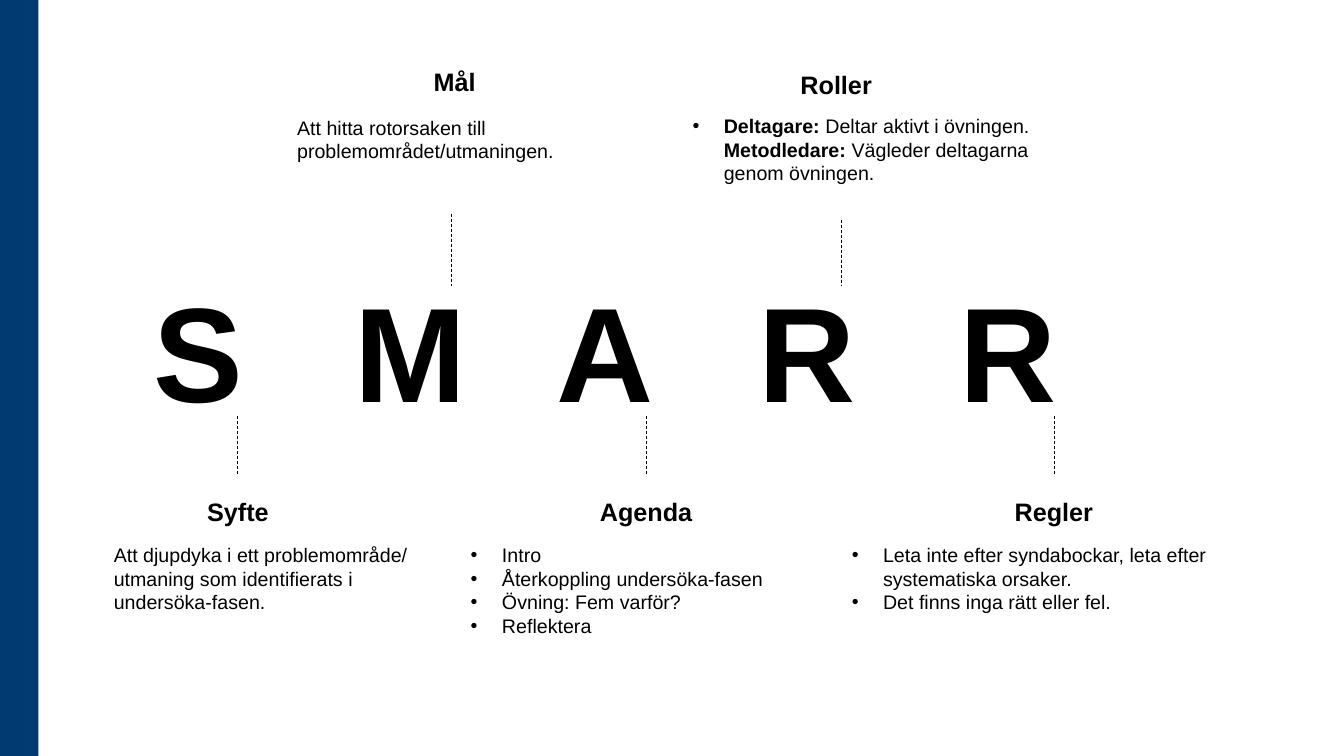
from dataclasses import dataclass

from lxml.etree import SubElement
from pptx import Presentation
from pptx.dml.color import RGBColor
from pptx.enum.dml import MSO_LINE
from pptx.enum.shapes import MSO_CONNECTOR, MSO_SHAPE
from pptx.enum.text import MSO_ANCHOR, MSO_AUTO_SIZE, PP_ALIGN
from pptx.oxml.ns import qn
from pptx.util import Inches, Pt


@dataclass(frozen=True)
class Theme:
    ink: RGBColor = RGBColor(0x00, 0x00, 0x00)
    bar: RGBColor = RGBColor(0x00, 0x3A, 0x70)
    font: str = "Arial"
    word: int = 96
    heading: int = 18
    body: int = 14
    hairline: float = 0.5


class SlideBuilder:
    """Places elements on a grid of 40 columns and 30 rows."""

    COLS, ROWS = 40, 30

    def __init__(self, prs, theme):
        self.theme = theme
        self.col = prs.slide_width / self.COLS
        self.row = prs.slide_height / self.ROWS
        self.slide = prs.slides.add_slide(prs.slide_layouts[4])
        self.shapes = self.slide.shapes
        self.free = [s for s in self.slide.placeholders
                     if s.placeholder_format.idx in (1, 2, 3, 4)]

    def box(self, x, y, w, h):
        return (round(x * self.col), round(y * self.row),
                round(w * self.col), round(h * self.row))

    def put(self, sp, area):
        sp.left, sp.top, sp.width, sp.height = self.box(*area)
        tf = sp.text_frame
        tf.word_wrap = True
        tf.auto_size = MSO_AUTO_SIZE.NONE
        tf.vertical_anchor = MSO_ANCHOR.TOP
        return tf

    def style(self, p, size, bold=False, align=PP_ALIGN.LEFT):
        p.alignment = align
        p.space_before = Pt(0)
        for r in p.runs:
            r.font.name = self.theme.font
            r.font.size = Pt(size)
            r.font.bold = bold
            r.font.color.rgb = self.theme.ink

    def bar(self, *area):
        sp = self.shapes.add_shape(MSO_SHAPE.RECTANGLE, *self.box(*area))
        sp.shadow.inherit = False
        sp.fill.solid()
        sp.fill.fore_color.rgb = self.theme.bar
        sp.line.fill.background()

    def word(self, letters, area, inset, pitch):
        """The title: one letter at each tab stop."""
        tf = self.put(self.shapes.title, area)
        tf.margin_left = round(inset * self.col)
        tf.text = "\t".join(letters)
        p = tf.paragraphs[0]
        self.style(p, self.theme.word, bold=True)
        tabs = SubElement(p._p.get_or_add_pPr(), qn("a:tabLst"))
        for i in range(1, len(letters)):
            SubElement(tabs, qn("a:tab"), pos=str(round(i * pitch * self.col)), algn="l")

    def heading(self, text, area):
        tf = self.put(self.shapes.add_textbox(0, 0, 0, 0), area)
        tf.text = text
        self.style(tf.paragraphs[0], self.theme.heading, True, PP_ALIGN.CENTER)

    def text(self, text, area):
        tf = self.put(self.shapes.add_textbox(0, 0, 0, 0), area)
        tf.text = text
        self.style(tf.paragraphs[0], self.theme.body)

    def bullets(self, items, area):
        """Each item is a list of runs; a run that ends in ': ' is bold."""
        tf = self.put(self.free.pop(0), area)
        for i, runs in enumerate(items):
            p = tf.paragraphs[0] if i == 0 else tf.add_paragraph()
            for part in runs:
                p.add_run().text = part
            self.style(p, self.theme.body)
            for r in p.runs:
                r.font.bold = r.text.endswith(": ")
            pPr = p._p.get_or_add_pPr()
            indent = Inches(0.31)
            pPr.set("marL", str(indent))
            pPr.set("indent", str(-indent))
            SubElement(pPr, qn("a:buFont"), typeface=self.theme.font)
            SubElement(pPr, qn("a:buChar"), char="•")

    def tick(self, x, top, bottom):
        left, y1, _, y2 = self.box(x, top, 0, bottom)
        c = self.shapes.add_connector(MSO_CONNECTOR.STRAIGHT, left, y1, left, y2)
        c.line.color.rgb = self.theme.ink
        c.line.width = Pt(self.theme.hairline)
        c.line.dash_style = MSO_LINE.DASH
        SubElement(c._element.spPr, qn("a:effectLst"))

    def finish(self):
        for sp in self.free:
            sp._element.getparent().remove(sp._element)


def main():
    prs = Presentation()
    prs.slide_width, prs.slide_height = Inches(13.33), Inches(7.5)
    s = SlideBuilder(prs, Theme())

    # Side bar and the word
    s.bar(0, 0, 1.14, 30)
    s.word("SMARR", (0, 10.44, 39.21, 6.88), inset=4.56, pitch=6)

    # Headings
    low, head_h = 19.48, 1.6
    for text, x, y, w in (("Syfte", 3.63, low, 6.9), ("Mål", 10.14, 2.44, 6.78),
                          ("Agenda", 15.78, low, 6.9), ("Roller", 19.32, 2.56, 11.13),
                          ("Regler", 27.6, low, 7.53)):
        s.heading(text, (x, y, w, head_h))

    # Dashed lines between letters and headings
    for x in (7.05, 19.23, 31.38):
        s.tick(x, 16.52, 18.8)
    for x, top in ((13.44, 8.48), (25.05, 8.72)):
        s.tick(x, top, 11.36)

    # Explanations
    below = 21.36
    s.text("Att djupdyka i ett problemområde/ utmaning som identifierats i undersöka-fasen.",
           (3.09, below, 9.66, 3.24))
    s.text("Att hitta rotorsaken till problemområdet/utmaningen.", (8.55, 4.4, 10.41, 2.28))
    s.bullets([["Intro"], ["Återkoppling undersöka-fasen"],
               ["Övning: Fem varför?"], ["Reflektera"]], (13.71, below, 11.55, 4.16))
    s.bullets([["Deltagare: ", "Deltar aktivt i övningen. ",
                "Metodledare: ", "Vägleder deltagarna genom övningen."]],
              (20.31, 4.32, 11.13, 4.16))
    s.bullets([["Leta inte efter syndabockar, leta efter systematiska orsaker."],
               ["Det finns inga rätt eller fel."]], (25.05, below, 12.93, 3.24))

    s.finish()
    prs.save("out.pptx")


if __name__ == "__main__":
    main()
